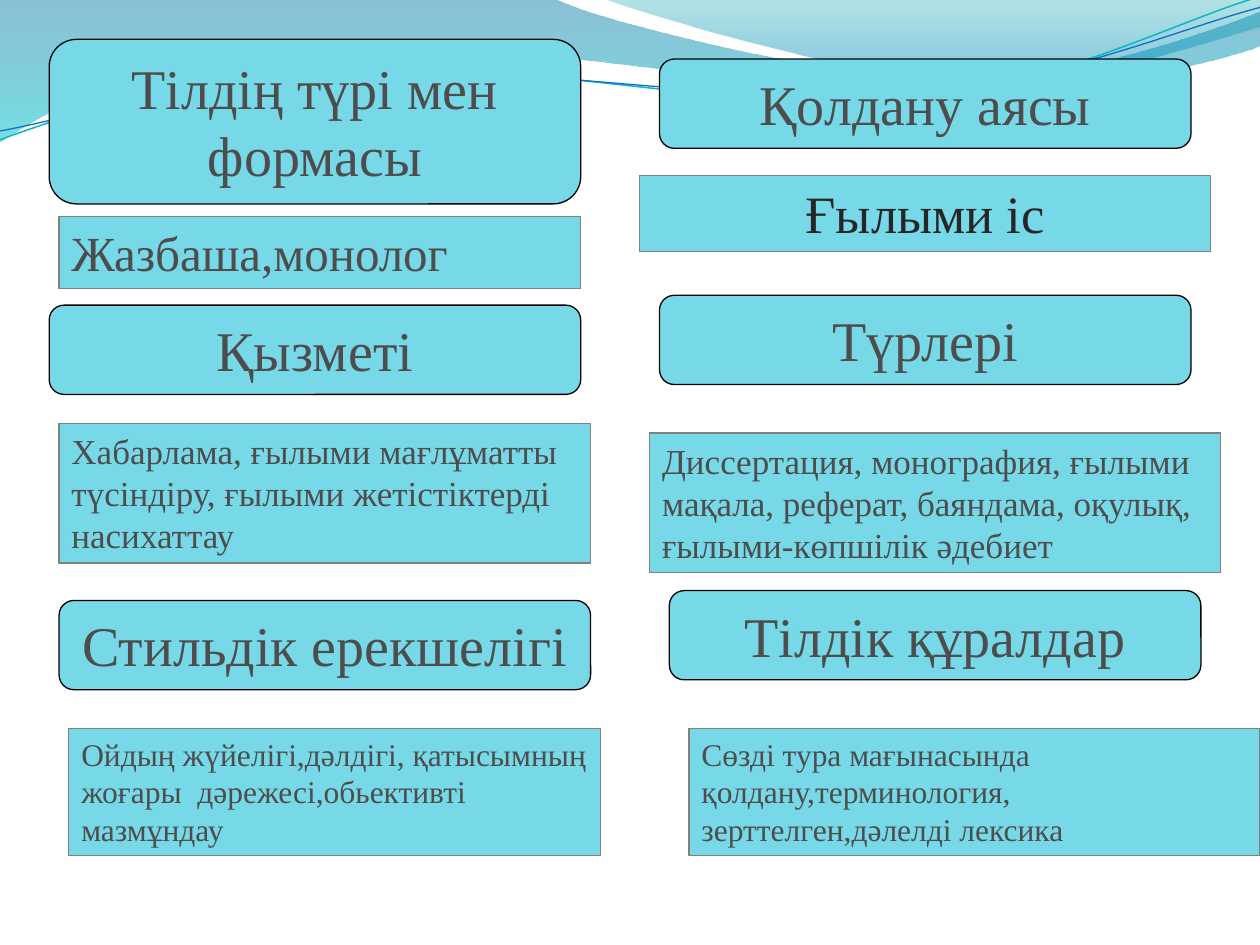
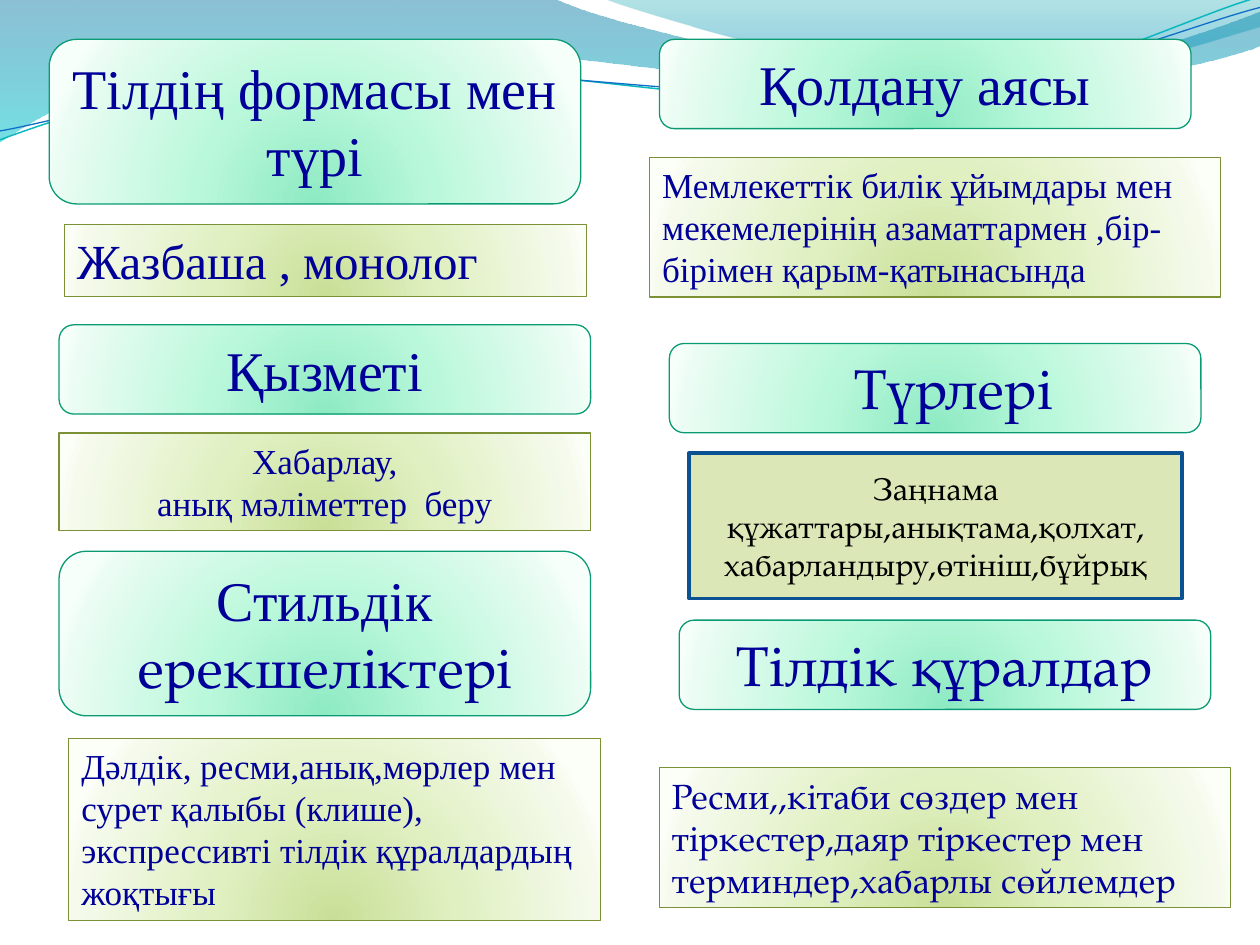
from math import cos, radians, sin

from lxml.etree import SubElement
from pptx import Presentation
from pptx.dml.color import RGBColor
from pptx.enum.shapes import MSO_SHAPE as SHAPE
from pptx.enum.text import MSO_ANCHOR as ANCHOR, MSO_AUTO_SIZE as AUTO, PP_ALIGN as ALIGN
from pptx.oxml.ns import qn
from pptx.util import Emu, Inches, Pt

WHITE = RGBColor(0xFF, 0xFF, 0xFF)
BLACK = RGBColor(0x00, 0x00, 0x00)
CYAN = RGBColor(0x77, 0xD9, 0xE8)
GRAY = RGBColor(0x80, 0x80, 0x80)
DARK_GRAY = RGBColor(0x4D, 0x4D, 0x4D)
NEAR_BLACK = RGBColor(0x26, 0x26, 0x26)
NAVY = RGBColor(0x00, 0x00, 0x99)
GREEN = RGBColor(0x0A, 0x9B, 0x74)
OLIVE = RGBColor(0x7B, 0x91, 0x35)
PALE_OLIVE = RGBColor(0xDB, 0xE7, 0xB6)
BLUE = RGBColor(0x0B, 0x52, 0x92)
WAVE_TEAL = RGBColor(0x0A, 0xB8, 0xBF)
WAVE_BLUE = RGBColor(0x0F, 0x6F, 0xC6)

# Gradient stops: position in percent, colour, opacity in percent
MINT_GLOW = [(0, RGBColor(0x8D, 0xEA, 0xC2), 100), (43, RGBColor(0xBA, 0xF8, 0xDB), 100),
             (93, RGBColor(0xEA, 0xFC, 0xF3), 100), (100, RGBColor(0xF7, 0xFF, 0xFB), 100)]
OLIVE_GLOW = [(0, RGBColor(0xC9, 0xDF, 0x97), 100), (43, RGBColor(0xE0, 0xF0, 0xC1), 100),
              (93, RGBColor(0xF5, 0xFA, 0xEC), 100), (100, RGBColor(0xFC, 0xFE, 0xF8), 100)]
DEEP_WAVE = [(0, RGBColor(0x00, 0x74, 0xA1), 45), (100, RGBColor(0x00, 0xC6, 0xCF), 55)]
LIGHT_WAVE = [(0, RGBColor(0x00, 0xA1, 0xA9), 30), (80, RGBColor(0x00, 0x8B, 0xBF), 45)]

SERIF = "Times New Roman"
PAGELLA = "TeX Gyre Pagella"
COLS = 128  # square grid cells across the slide
TILT = 2.7  # degrees by which the strands are turned to the left

# Waves in tenths of the slide width: a pair is a corner, six numbers a Bezier curve
BANDS = [
    (DEEP_WAVE, [(0, 0), (4.4, -0.01), (4.76, 0.17, 6.64, 0.63, 7.58, 0.63),
                 (8.53, 0.63, 9.58, 0.26, 10, 0.09), (10.01, 0.36),
                 (9.83, 0.44, 8.7, 0.76, 7.46, 0.75), (6.22, 0.75, 3.82, 0.28, 2.57, 0.34),
                 (1.29, 0.36, 0.46, 0.83, -0.01, 1.13)]),
    (LIGHT_WAVE, [(4.79, -0.01), (5.09, 0.11, 6.82, 0.62, 7.69, 0.65),
                  (8.56, 0.69, 9.61, 0.32, 10, 0.21), (10, 0)]),
]
STRANDS = [
    (WAVE_TEAL, 0.85, [(0, 1.11), (0.48, 0.93, 1.58, 0.57, 2.77, 0.52),
                       (3.95, 0.47, 5.93, 0.89, 7.13, 0.8),
                       (8.33, 0.71, 9.38, 0.15, 9.98, -0.02)]),
    (WAVE_BLUE, 0.75, [(0, 1.04), (0.47, 0.96, 1.64, 0.61, 2.83, 0.56),
                       (4.03, 0.51, 5.97, 0.84, 7.17, 0.75),
                       (8.36, 0.67, 9.41, 0.21, 10, 0.06)]),
]

# Formats of the boxes; every slide has one for headings and one for details
HEADING = dict(shape=SHAPE.ROUNDED_RECTANGLE, width=54, size=32, align=ALIGN.CENTER)
DETAIL = dict(shape=SHAPE.RECTANGLE, width=58, size=20, align=ALIGN.LEFT)
SCIENCE = dict(fill=CYAN, color=DARK_GRAY)
SCIENCE_HEADING = HEADING | SCIENCE | dict(line=BLACK)
SCIENCE_DETAIL = DETAIL | SCIENCE | dict(line=GRAY)
OFFICIAL_HEADING = HEADING | dict(fill=MINT_GLOW, line=GREEN, color=NAVY)
OFFICIAL_DETAIL = DETAIL | dict(fill=OLIVE_GLOW, line=OLIVE, color=NAVY)

# Boxes: column, row, text lines, text, differences from the slide's format
SCIENCE_HEADINGS = [
    (5, 4, 2, "Тілдің түрі мен формасы", {}),
    (67, 6, 1, "Қолдану аясы", {}),
    (5, 31, 1, "Қызметі", {}),
    (67, 30, 1, "Түрлері", {}),
    (6, 61, 1, "Стильдік ерекшелігі", {}),
    (68, 60, 1, "Тілдік құралдар", {}),
]
SCIENCE_DETAILS = [
    (6, 22, 1, "Жазбаша,монолог", dict(width=53, size=28)),
    (65, 17.8, 1, "Ғылыми іс", dict(size=30, align=ALIGN.CENTER, color=NEAR_BLACK)),
    (6, 43, 3, "Хабарлама, ғылыми мағлұматты түсіндіру, ғылыми жетістіктерді насихаттау",
     dict(width=54)),
    (66, 44, 3, "Диссертация, монография, ғылыми мақала, реферат, баяндама, оқулық, "
     "ғылыми-көпшілік әдебиет", {}),
    (7, 74, 3, "Ойдың жүйелігі,дәлдігі, қатысымның жоғары  дәрежесі,обьективті мазмұндау",
     dict(width=54, size=18)),
    (70, 74, 3, "Сөзді тура мағынасында қолдану,терминология, зерттелген,дәлелді лексика",
     dict(size=18)),
]
OFFICIAL_HEADINGS = [
    (5, 4, 2, "Тілдің формасы мен түрі", {}),
    (67, 4, 1, "Қолдану аясы", {}),
    (6, 33, 1, "Қызметі", {}),
    (68, 34.9, 1, "Түрлері", dict(font=PAGELLA, align=ALIGN.LEFT, margin=17.1)),
    (6, 56, 2, [[("Стильдік ", SERIF), ("ерекшеліктері", PAGELLA)]], {}),
    (69, 63, 1, "Тілдік құралдар", dict(font=PAGELLA)),
]
OFFICIAL_DETAILS = [
    (6.55, 22.8, 1, "Жазбаша , монолог", dict(width=53, size=28)),
    (66, 16, 3, "Мемлекеттік билік ұйымдары мен мекемелерінің азаматтармен ,бір-бірімен "
     "қарым-қатынасында", {}),
    (6, 44, 2, ["Хабарлау,", "анық мәліметтер  беру"], dict(width=54, align=ALIGN.CENTER)),
    (7, 75, 4, "Дәлдік, ресми,анық,мөрлер мен сурет қалыбы (клише), экспрессивті тілдік "
     "құралдардың жоқтығы", dict(width=54)),
    (67, 78, 3, "Ресми,,кітаби сөздер мен тіркестер,даяр тіркестер мен терминдер,хабарлы "
     "сөйлемдер", dict(font=PAGELLA)),
    (70, 46, 3, ["Заңнама құжаттары,анықтама,қолхат,", "хабарландыру,өтініш,бұйрық"],
     dict(width=50.1, height=14.8, size=18, align=ALIGN.CENTER, font=PAGELLA,
          fill=PALE_OLIVE, line=BLUE, weight=2, color=BLACK, first_line=-2.2)),
]


def paint_gradient(s, stops, glow):
    """Fill with a glow rising from the bottom centre, or top to bottom."""
    s.fill.gradient()
    grad = s._element.spPr.find(qn("a:gradFill"))
    for child in list(grad):
        grad.remove(child)
    stop_list = SubElement(grad, qn("a:gsLst"))
    for pos, color, opacity in stops:
        stop = SubElement(stop_list, qn("a:gs"), pos=str(pos * 1000))
        clr = SubElement(stop, qn("a:srgbClr"), val=str(color))
        if opacity < 100:
            SubElement(clr, qn("a:alpha"), val=str(opacity * 1000))
    if glow:
        center = SubElement(grad, qn("a:path"), path="circle")
        SubElement(center, qn("a:fillToRect"), l="50000", t="130000", r="50000", b="-30000")
    else:
        SubElement(grad, qn("a:lin"), ang="5400000", scaled="1")


def turn(segments, degrees):
    """Turn the points clockwise about the middle between both ends."""
    (x0, y0), (x1, y1) = segments[0], segments[-1][-2:]
    cx, cy = (x0 + x1) / 2, (y0 + y1) / 2
    c, s = cos(radians(degrees)), sin(radians(degrees))
    return [[v for x, y in zip(seg[::2], seg[1::2])
             for v in (cx + (x - cx) * c - (y - cy) * s, cy + (x - cx) * s + (y - cy) * c)]
            for seg in segments]


def add_outline(slide, segments, width, closed):
    """Build the outline from its end points, then bend the sides that are curves."""
    unit = width / 10
    ends = [(seg[-2] * unit, seg[-1] * unit) for seg in segments]
    builder = slide.shapes.build_freeform(*ends[0])
    builder.add_line_segments(ends[1:], close=closed)
    s = builder.convert_to_shape()
    s.shadow.inherit = False
    for side, seg in zip(list(s._element.iter(qn("a:lnTo"))), segments[1:]):
        if len(seg) == 6:
            side.tag = qn("a:cubicBezTo")
            side.remove(side[0])
            for x, y in zip(seg[::2], seg[1::2]):
                SubElement(side, qn("a:pt"), x=str(round(x * unit - s.left)),
                           y=str(round(y * unit - s.top)))
    return s


def draw_waves(slide, width):
    for stops, segments in BANDS:
        s = add_outline(slide, segments, width, True)
        paint_gradient(s, stops, glow=False)
        s.line.fill.background()
    for color, weight, segments in STRANDS:
        s = add_outline(slide, turn(segments, TILT), width, False)
        s.rotation = -TILT
        s.fill.background()
        s.line.color.rgb = color
        s.line.width = Pt(weight)


def text_height(lines, fmt):
    """Height of a box that fits its lines; round corners take a tenth of it."""
    height = Inches(0.1) + lines * Pt(fmt["size"]) * 1.21
    return height / 0.9 if fmt["shape"] == SHAPE.ROUNDED_RECTANGLE else height


def write_text(s, text, fmt, cell):
    tf = s.text_frame
    fixed = "height" in fmt
    tf.word_wrap = True
    tf.auto_size = AUTO.NONE if fixed else AUTO.SHAPE_TO_FIT_TEXT
    tf.vertical_anchor = ANCHOR.MIDDLE if fixed else ANCHOR.TOP
    paragraphs = [text] if isinstance(text, str) else text
    for i, runs in enumerate(paragraphs):
        p = tf.add_paragraph() if i else tf.paragraphs[0]
        p.alignment = fmt["align"]
        for key, name in dict(margin="marL", first_line="indent").items():
            if key in fmt and i == 0:
                p._p.get_or_add_pPr().set(name, str(int(fmt[key] * cell)))
        if isinstance(runs, str):
            runs = [(runs, fmt.get("font", SERIF))]
        for words, font in runs:
            r = p.add_run()
            r.text = words
            for name, value in dict(name=font, size=Pt(fmt["size"])).items():
                setattr(r.font, name, value)
            r.font.color.rgb = fmt["color"]


def add_box(slide, cell, fmt, col, row, lines, text, changes):
    fmt = fmt | changes
    height = fmt["height"] * cell if "height" in fmt else text_height(lines, fmt)
    place = (col * cell, row * cell, fmt["width"] * cell, height)
    s = slide.shapes.add_shape(fmt["shape"], *(Emu(int(v)) for v in place))
    s.shadow.inherit = False
    if isinstance(fmt["fill"], list):
        paint_gradient(s, fmt["fill"], glow=True)
    else:
        s.fill.solid()
        s.fill.fore_color.rgb = fmt["fill"]
    s.line.color.rgb = fmt["line"]
    s.line.width = Pt(fmt.get("weight", 0.75))
    write_text(s, text, fmt, cell)


def add_style_slide(prs, *groups):
    """Add a slide about one style of speech: headings, each with its detail."""
    slide = prs.slides.add_slide(prs.slide_layouts[6])
    slide.background.fill.solid()
    slide.background.fill.fore_color.rgb = WHITE
    draw_waves(slide, prs.slide_width)
    for fmt, boxes in groups:
        for box in boxes:
            add_box(slide, prs.slide_width / COLS, fmt, *box)


def main():
    prs = Presentation()
    prs.slide_width, prs.slide_height = Inches(10), Inches(7.5)
    add_style_slide(prs, (SCIENCE_HEADING, SCIENCE_HEADINGS), (SCIENCE_DETAIL, SCIENCE_DETAILS))
    add_style_slide(prs, (OFFICIAL_HEADING, OFFICIAL_HEADINGS),
                    (OFFICIAL_DETAIL, OFFICIAL_DETAILS))
    prs.save("out.pptx")


if __name__ == "__main__":
    main()
